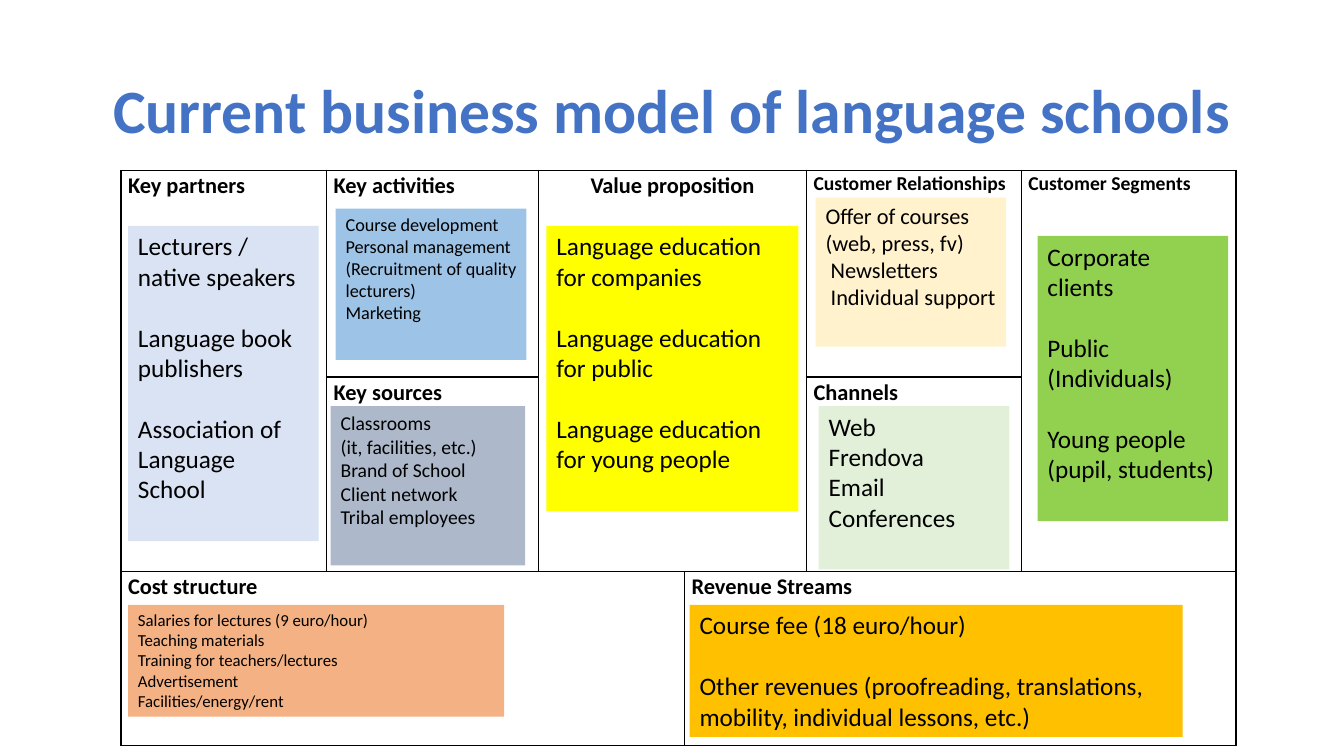
from dataclasses import dataclass

from lxml.etree import SubElement
from pptx import Presentation
from pptx.dml.color import RGBColor
from pptx.enum.shapes import MSO_SHAPE
from pptx.enum.text import MSO_ANCHOR, PP_ALIGN
from pptx.oxml.ns import qn
from pptx.slide import Slide
from pptx.table import Table, _Cell as Cell
from pptx.text.text import TextFrame
from pptx.util import Inches, Pt


@dataclass(frozen=True)
class Theme:
    font: str = "Calibri"
    ink: str = "000000"
    title: str = "4472C4"
    title_size: int = 44
    heading_size: int = 16
    small_heading_size: int = 14
    large: int = 18
    medium: int = 16
    compact: int = 14
    small: int = 13
    tiny: int = 12
    blank_line: int = 22
    yellow: str = "FFFF00"
    green: str = "92D050"
    pale_green: str = "E2F0D9"
    cream: str = "FFF2CC"
    pale_blue: str = "DAE3F3"
    slate: str = "ADB9CA"
    sky: str = "9DC3E6"
    salmon: str = "F4B183"
    amber: str = "FFC000"


THEME = Theme()


@dataclass(frozen=True)
class Block:
    heading: str
    row: int
    column: int
    last_row: int
    last_column: int
    size: int = THEME.heading_size
    align: PP_ALIGN = PP_ALIGN.JUSTIFY


@dataclass(frozen=True)
class Note:
    left: float
    top: float
    width: float
    height: float
    fill: str
    size: int
    lines: tuple[str, ...]
    gap: int = 0


COLUMNS = (2.04, 2.1, 1.45, 1.21, 2.13, 2.13)
ROWS = (2.05, 1.93, 1.73)

BLOCKS = (
    Block("Key partners", 0, 0, 1, 0),
    Block("Key activities", 0, 1, 0, 1),
    Block("Value proposition", 0, 2, 1, 3, align=PP_ALIGN.CENTER),
    Block("Customer Relationships", 0, 4, 0, 4, THEME.small_heading_size),
    Block("Customer Segments", 0, 5, 1, 5, THEME.small_heading_size),
    Block("Key sources", 1, 1, 1, 1),
    Block("Channels", 1, 4, 1, 4),
    Block("Cost structure", 2, 0, 2, 2),
    Block("Revenue Streams", 2, 3, 2, 5),
)

NOTES = (
    Note(5.42, 2.24, 2.5, 2.83, THEME.yellow, THEME.large,
         ("Language education for companies", "Language education for public",
          "Language education for young people"), THEME.blank_line),
    Note(10.29, 2.34, 1.89, 2.83, THEME.green, THEME.large,
         ("Corporate clients", "Public (Individuals)",
          "Young people (pupil, students)"), THEME.blank_line),
    Note(8.12, 4.03, 1.89, 1.62, THEME.pale_green, THEME.large,
         ("Web", "Frendova", "Email", "Conferences")),
    Note(8.09, 1.96, 1.89, 1.48, THEME.cream, THEME.medium,
         ("Offer of courses (web, press, fv)", " Newsletters",
          " Individual support")),
    Note(1.27, 2.24, 1.89, 3.13, THEME.pale_blue, THEME.large,
         ("Lecturers / native speakers", "Language book publishers",
          "Association of Language School"), THEME.blank_line),
    Note(3.28, 4.03, 1.93, 1.58, THEME.slate, THEME.compact,
         ("Classrooms", "(it, facilities, etc.)", "Brand of School",
          "Client network", "Tribal employees")),
    Note(3.33, 2.07, 1.89, 1.5, THEME.sky, THEME.small,
         ("Course development",
          "Personal management (Recruitment of quality lecturers)",
          "Marketing")),
    Note(1.27, 6, 3.73, 1.11, THEME.salmon, THEME.tiny,
         ("Salaries for lectures (9 euro/hour)", "Teaching materials",
          "Training for teachers/lectures", "Advertisement",
          "Facilities/energy/rent")),
    Note(6.84, 6, 4.89, 1.31, THEME.amber, THEME.large,
         ("Course fee (18 euro/hour)",
          "Other revenues (proofreading, translations, mobility, "
          "individual lessons, etc.)"), THEME.blank_line),
)


def write(frame: TextFrame, lines: tuple[str, ...], size: int, color: str,
          bold: bool, align: PP_ALIGN, gap: int = 0) -> None:
    frame.text = "\n".join(lines)
    frame.word_wrap = True
    for index, para in enumerate(frame.paragraphs):
        para.alignment = align
        if index and gap:
            para.space_before = Pt(gap)
        for span in para.runs:
            span.font.name = THEME.font
            span.font.size = Pt(size)
            span.font.bold = bold
            span.font.color.rgb = RGBColor.from_string(color)


def draw_title(page: Slide, title: str) -> None:
    box = page.shapes.add_textbox(Inches(0.92), Inches(0.4), Inches(11.5), Inches(1.45))
    frame = box.text_frame
    write(frame, (title,), THEME.title_size, THEME.title, True, PP_ALIGN.CENTER)
    frame.vertical_anchor = MSO_ANCHOR.MIDDLE
    frame.paragraphs[0].line_spacing = 0.9


def outline(cell: Cell) -> None:
    properties = cell._tc.get_or_add_tcPr()
    for index, side in enumerate(("a:lnL", "a:lnR", "a:lnT", "a:lnB")):
        line = SubElement(properties, qn(side), w=str(Pt(1)))
        fill = SubElement(line, qn("a:solidFill"))
        SubElement(fill, qn("a:srgbClr"), val=THEME.ink)
        properties.insert(index, line)


def fill_block(table: Table, block: Block) -> None:
    cell = table.cell(block.row, block.column)
    corner = table.cell(block.last_row, block.last_column)
    if (block.row, block.column) != (block.last_row, block.last_column):
        cell.merge(corner)
    write(cell.text_frame, (block.heading,), block.size, THEME.ink, True, block.align)
    para = cell.text_frame.paragraphs[0]
    para.line_spacing = 1.07
    para.space_after = Pt(8)


def draw_canvas(page: Slide) -> None:
    table = page.shapes.add_table(
        len(ROWS), len(COLUMNS), Inches(1.2), Inches(1.69),
        Inches(sum(COLUMNS)), Inches(sum(ROWS))).table
    table.first_row = False
    table.horz_banding = False
    for column, width in zip(table.columns, COLUMNS):
        column.width = Inches(width)
    for row, height in zip(table.rows, ROWS):
        row.height = Inches(height)
    for cell in table.iter_cells():
        cell.margin_left = cell.margin_right = Inches(0.07)
        cell.margin_top = cell.margin_bottom = 0
        cell.fill.background()
        outline(cell)
    for block in BLOCKS:
        fill_block(table, block)


def draw_note(page: Slide, note: Note) -> None:
    box = page.shapes.add_shape(
        MSO_SHAPE.RECTANGLE, Inches(note.left), Inches(note.top),
        Inches(note.width), Inches(note.height))
    box.shadow.inherit = False
    box.fill.solid()
    box.fill.fore_color.rgb = RGBColor.from_string(note.fill)
    box.line.fill.background()
    box.text_frame.vertical_anchor = MSO_ANCHOR.TOP
    write(box.text_frame, note.lines, note.size, THEME.ink, False,
          PP_ALIGN.LEFT, note.gap)


def main() -> None:
    deck = Presentation()
    deck.slide_width = Inches(13.33)
    deck.slide_height = Inches(7.5)
    page = deck.slides.add_slide(deck.slide_layouts[6])
    draw_title(page, "Current business model of language schools")
    draw_canvas(page)
    for note in NOTES:
        draw_note(page, note)
    deck.save("out.pptx")


if __name__ == "__main__":
    main()
